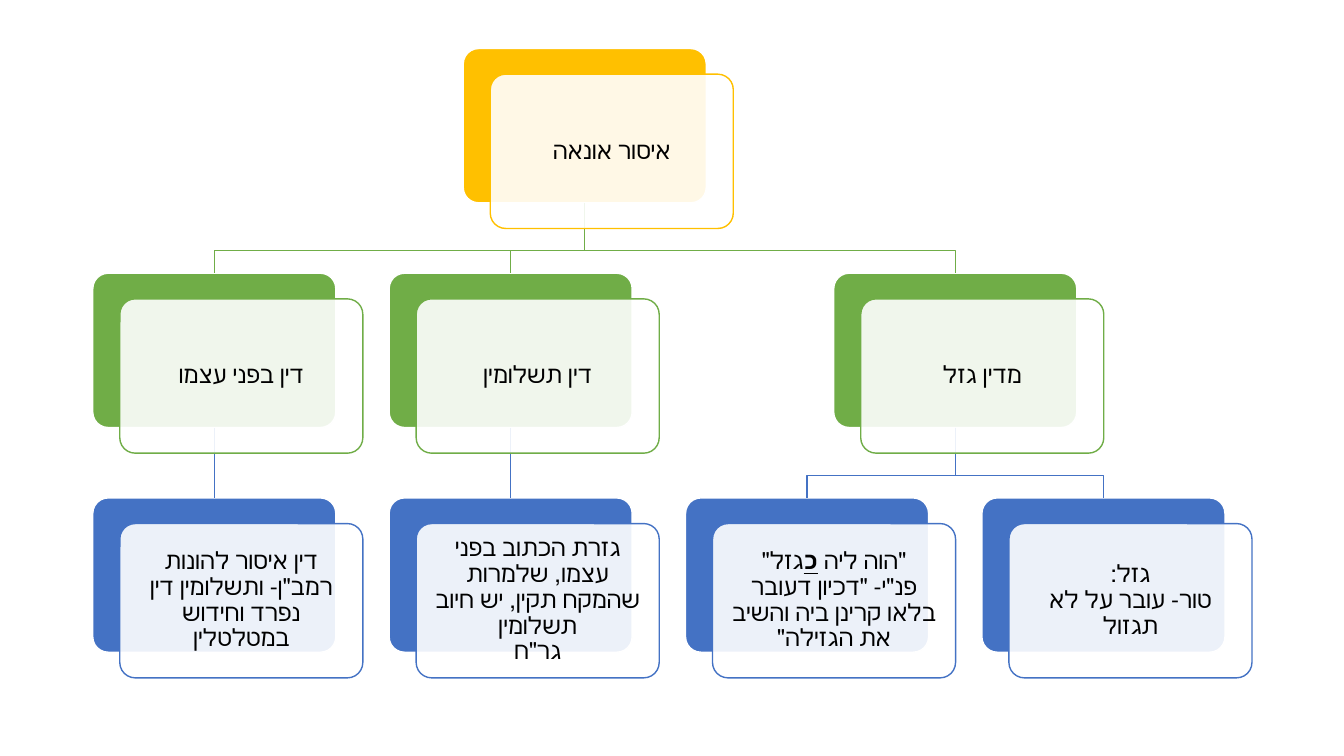
from dataclasses import dataclass

import pptx
import pptx.dml.color
import pptx.enum.shapes
import pptx.enum.text
import pptx.oxml
import pptx.oxml.ns
import pptx.util

Pt = pptx.util.Pt
RGBColor = pptx.dml.color.RGBColor


@dataclass(frozen=True)
class Theme:
    levels: tuple = (RGBColor(0xFF, 0xC0, 0x00), RGBColor(0x70, 0xAD, 0x47), RGBColor(0x44, 0x72, 0xC4))
    paper: RGBColor = RGBColor(0xFF, 0xFF, 0xFF)
    ink: RGBColor = RGBColor(0x00, 0x00, 0x00)
    font: str = "Calibri"
    size: int = 17


theme = Theme()

CARD_WIDTH, CARD_HEIGHT = 173.6, 110.2
COLUMN_LEFT, COLUMN_STEP = 66.3, 211.7
LEVEL_TOP, LEVEL_STEP = 34.7, 160.5
FRONT_SHIFT_X, FRONT_SHIFT_Y = 19.3, 18.3
BEND_DROP = 34.2

# Each node: column, level, parent index, lines of text (*emphasised*)
nodes = [
    (1.25, 0, None, ["איסור אונאה"]),
    (2.5, 1, 0, ["מדין גזל"]),
    (3, 2, 1, ["גזל:", "טור- עובר על לא תגזול"]),
    (2, 2, 1, ['"הוה ליה *כ*גזל"', 'פנ"י- "דכיון דעובר בלאו קרינן ביה והשיב את הגזילה"']),
    (1, 1, 0, ["דין תשלומין"]),
    (1, 2, 4, ["גזרת הכתוב בפני עצמו, שלמרות שהמקח תקין, יש חיוב תשלומין", 'גר"ח']),
    (0, 1, 0, ["דין בפני עצמו"]),
    (0, 2, 6, ["דין איסור להונות", 'רמב"ן- ותשלומין דין נפרד וחידוש במטלטלין']),
]

presentation = pptx.Presentation()
presentation.slide_width = Pt(960)
presentation.slide_height = Pt(540)
slide = presentation.slides.add_slide(presentation.slide_layouts[6])


def add_card(left, top, fill_color, line_color):
    card = slide.shapes.add_shape(
        pptx.enum.shapes.MSO_SHAPE.ROUNDED_RECTANGLE, Pt(left), Pt(top), Pt(CARD_WIDTH), Pt(CARD_HEIGHT))
    card.adjustments[0] = 0.1
    card.shadow.inherit = False
    card.fill.solid()
    card.fill.fore_color.rgb = fill_color
    card.line.color.rgb = line_color
    card.line.width = Pt(1)
    return card


# Solid cards at the back
back_cards = []
for column, level, parent, lines in nodes:
    back_cards.append(add_card(
        COLUMN_LEFT + column * COLUMN_STEP, LEVEL_TOP + level * LEVEL_STEP, theme.levels[level], theme.paper))

# Branches from each parent to its children
for child_card, (column, level, parent, lines) in zip(back_cards, nodes):
    if parent is None:
        continue
    parent_card = back_cards[parent]
    start_x = parent_card.left + parent_card.width // 2
    start_y = parent_card.top + parent_card.height
    end_x = child_card.left + child_card.width // 2
    if column == nodes[parent][0]:
        branch = slide.shapes.add_connector(
            pptx.enum.shapes.MSO_CONNECTOR.STRAIGHT, start_x, start_y, end_x, child_card.top)
        branch.begin_connect(parent_card, 2)
        branch.end_connect(child_card, 0)
        pptx.oxml.ns.qn("a:effectLst")
        branch._element.spPr.append(pptx.oxml.parse_xml(
            '<a:effectLst xmlns:a="http://schemas.openxmlformats.org/drawingml/2006/main"/>'))
    else:
        bend_y = start_y + Pt(BEND_DROP)
        builder = slide.shapes.build_freeform(start_x, start_y)
        builder.add_line_segments([(start_x, bend_y), (end_x, bend_y), (end_x, child_card.top)], close=False)
        branch = builder.convert_to_shape()
        branch.fill.background()
        branch.shadow.inherit = False
    branch.line.color.rgb = theme.levels[level]
    branch.line.width = Pt(1)

# Translucent cards with the text in front
for column, level, parent, lines in nodes:
    card = add_card(
        COLUMN_LEFT + column * COLUMN_STEP + FRONT_SHIFT_X, LEVEL_TOP + level * LEVEL_STEP + FRONT_SHIFT_Y,
        theme.paper, theme.levels[level])
    color = card._element.spPr.find(".//" + pptx.oxml.ns.qn("a:srgbClr"))
    color.append(pptx.oxml.parse_xml(
        '<a:alpha xmlns:a="http://schemas.openxmlformats.org/drawingml/2006/main" val="90000"/>'))

    frame = card.text_frame
    frame.word_wrap = True
    frame.vertical_anchor = pptx.enum.text.MSO_ANCHOR.MIDDLE
    frame.margin_left = frame.margin_right = frame.margin_top = frame.margin_bottom = Pt(5)
    paragraph = frame.paragraphs[0]
    paragraph.alignment = pptx.enum.text.PP_ALIGN.CENTER
    paragraph.line_spacing = 0.9
    paragraph._p.get_or_add_pPr().set("rtl", "1")
    paragraph.font.name = theme.font
    paragraph.font.size = Pt(theme.size)
    paragraph.font.color.rgb = theme.ink
    for line_number, line in enumerate(lines):
        if line_number:
            paragraph.add_line_break()
        for part_number, part in enumerate(line.split("*")):
            run = paragraph.add_run()
            run.text = part
            if part_number % 2:
                run.font.bold = True
                run.font.underline = True

presentation.save("out.pptx")
